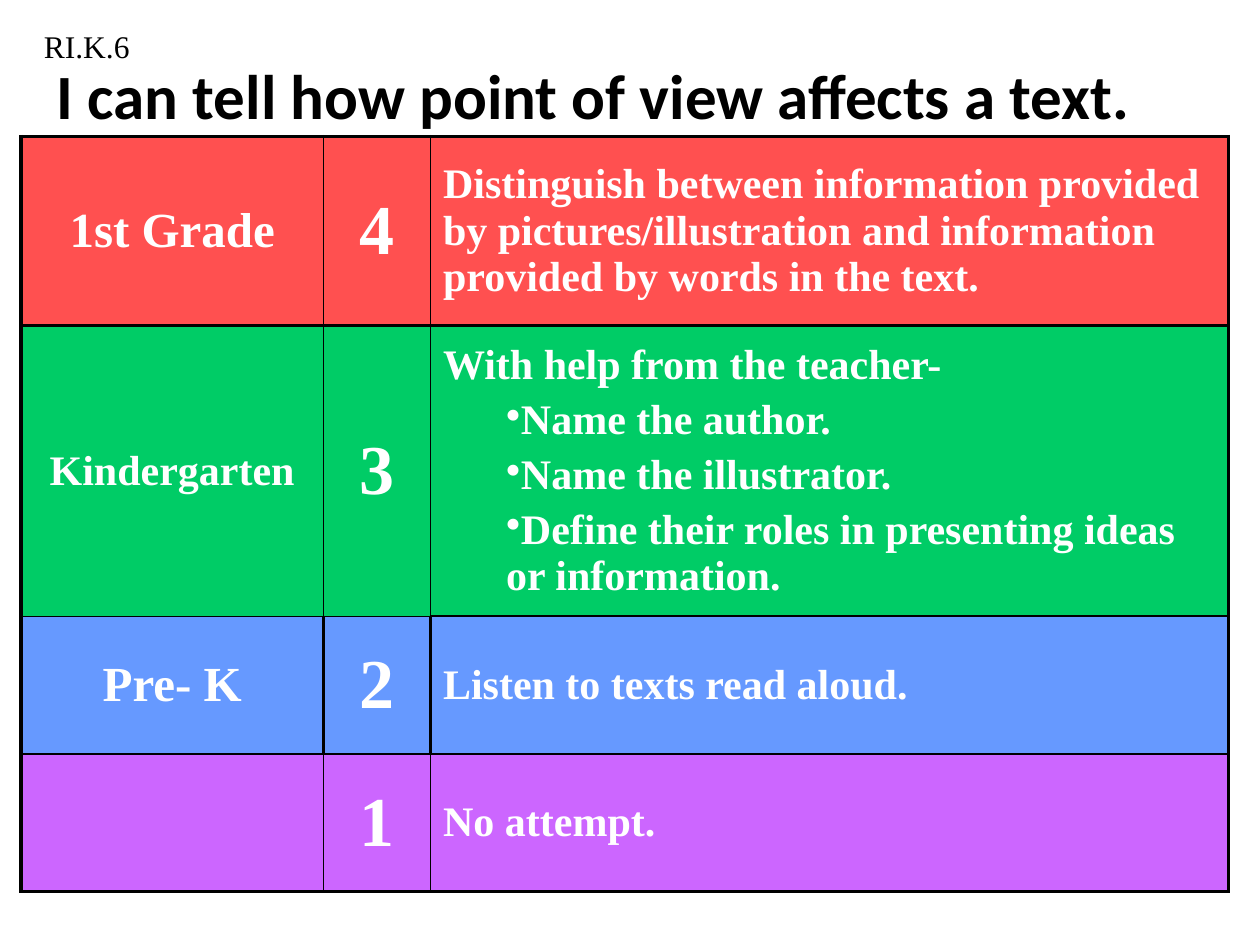
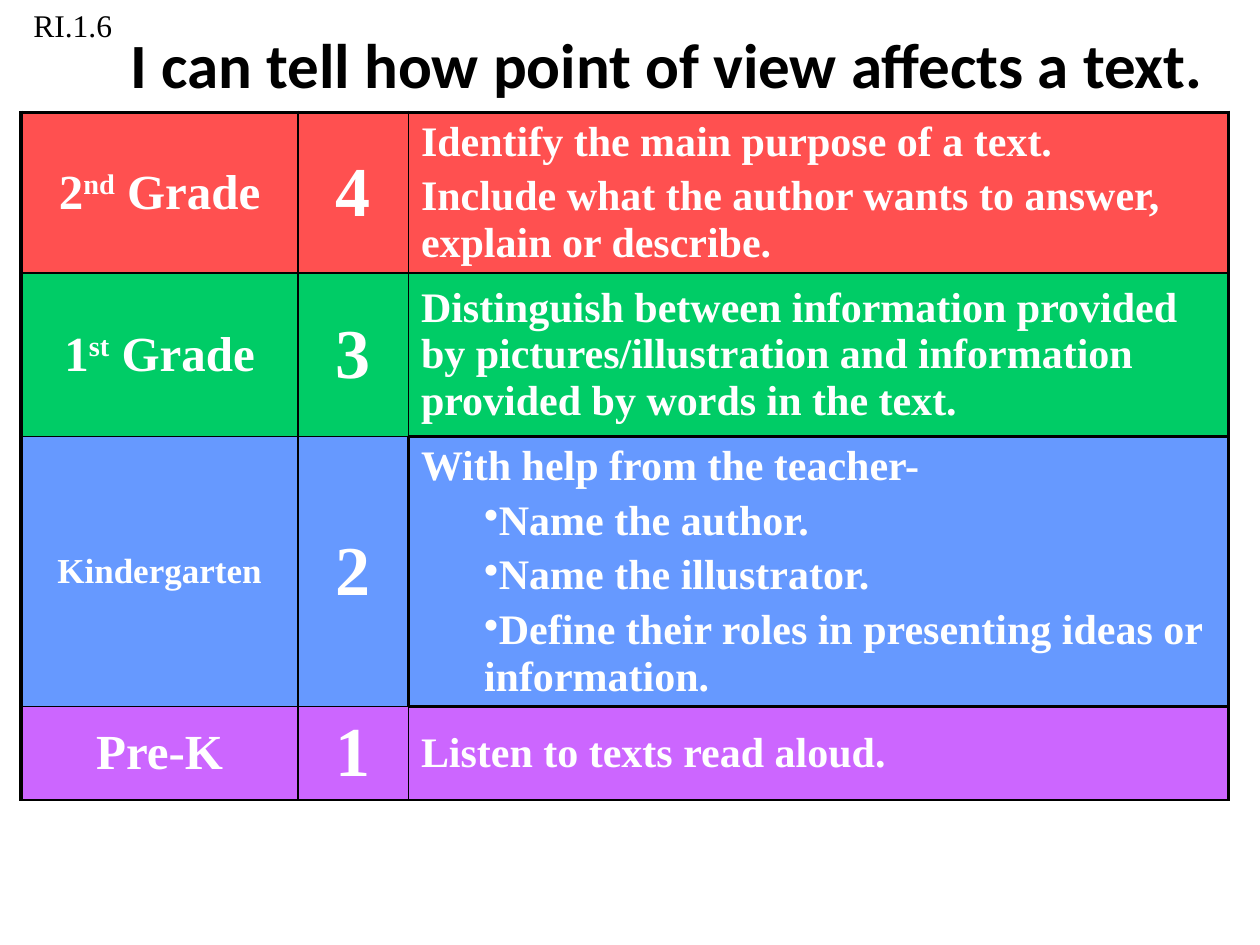
from dataclasses import dataclass
from lxml.etree import SubElement
from pptx import Presentation
from pptx.dml.color import RGBColor as Color
from pptx.enum.text import MSO_ANCHOR as Anchor, MSO_AUTO_SIZE as AutoSize, PP_ALIGN as Align
from pptx.oxml.ns import qn
from pptx.util import Emu, Inches, Pt

COLORS = {
    "ink": "000000", "paper": "FFFFFF",
    "4": "FF5050", "3": "00CC66", "2": "6699FF", "1": "CC66FF",
}
GRID_COLUMNS, GRID_ROWS = 120, 90
GOAL = "I can tell how point of view affects a text."
DISTINGUISH = ["Distinguish between information provided by pictures/illustration "
               "and information provided by words in the text."]
WITH_HELP = ["With help from the teacher-", "•Name the author.", "•Name the illustrator.",
             "•Define their roles in presenting ideas or information."]
LISTEN = ["Listen to texts read aloud."]


@dataclass
class Level:
    grade: tuple
    criteria: list
    height: float
    grade_size: int = 28


class RubricDeck:
    title_font, body_font = "Calibri", "Times New Roman"
    thin, medium, thick = 1, 1.5, 2.25

    def __init__(self):
        self.deck = Presentation()
        self.deck.slide_width, self.deck.slide_height = Inches(10), Inches(7.5)
        self.page = None

    def across(self, columns):
        return Emu(round(self.deck.slide_width * columns / GRID_COLUMNS))

    def down(self, rows):
        return Emu(round(self.deck.slide_height * rows / GRID_ROWS))

    def area(self, left, top, width, height):
        return self.across(left), self.down(top), self.across(width), self.down(height)

    def add_page(self):
        self.page = self.deck.slides.add_slide(self.deck.slide_layouts[5])

    def format_para(self, para, font, size, color, bold=False, align=Align.LEFT):
        para.alignment = align
        for span in para.runs:
            span.font.name, span.font.size, span.font.bold = font, Pt(size), bold
            span.font.color.rgb = Color.from_string(COLORS[color])

    def title(self, text, left, top):
        box = self.page.shapes.title
        box.left, box.top, box.width, box.height = self.area(left, top, 113, 12)
        frame = box.text_frame
        frame.text = text
        frame.word_wrap, frame.auto_size = True, AutoSize.NONE
        frame.vertical_anchor = Anchor.MIDDLE
        self.format_para(frame.paragraphs[0], self.title_font, 36, "ink", True, Align.CENTER)

    def standard_code(self, text, left, top):
        frame = self.page.shapes.add_textbox(*self.area(left, top, 17, 4.85)).text_frame
        frame.text = text
        frame.word_wrap, frame.auto_size = True, AutoSize.SHAPE_TO_FIT_TEXT
        self.format_para(frame.paragraphs[0], self.body_font, 18, "ink")

    def cell_para(self, para, size, align=Align.LEFT):
        self.format_para(para, self.body_font, size, "paper", True, align)
        para.space_before = Pt(size * 0.2)

    def borders(self, cell, row, column):
        inner = self.medium if row == 2 else self.thin
        level = self.medium if column == 2 else self.thin
        widths = {
            "L": self.thick if column == 0 else inner,
            "R": self.thick if column == 2 and row != 2 else inner,
            "T": (self.thick, self.medium, level, level)[row],
            "B": (self.medium, level, level, self.medium)[row],
        }
        properties = cell._tc.get_or_add_tcPr()
        for side, width in widths.items():
            line = SubElement(properties, qn(f"a:ln{side}"), w=str(Pt(width)))
            fill = SubElement(line, qn("a:solidFill"))
            SubElement(fill, qn("a:srgbClr"), val=COLORS["ink"])

    def grade_cell(self, cell, parts, size):
        para = cell.text_frame.paragraphs[0]
        for index, part in enumerate(parts):
            span = para.add_run()
            span.text = part
            if index == 1:
                span._r.get_or_add_rPr().set("baseline", "30000")
        self.cell_para(para, size, Align.CENTER)

    def score_cell(self, cell, score):
        cell.text_frame.text = score
        self.cell_para(cell.text_frame.paragraphs[0], 40, Align.CENTER)

    def criteria_cell(self, cell, criteria):
        cell.text_frame.text = "\n".join(line.lstrip("•") for line in criteria)
        for line, para in zip(criteria, cell.text_frame.paragraphs):
            self.cell_para(para, 24)
            if line.startswith("•"):
                para.level = 1
                properties = para._p.get_or_add_pPr()
                properties.set("marL", str(Inches(0.5)))
                properties.set("indent", "0")
                SubElement(properties, qn("a:buChar"), char="•")

    def rubric(self, top, widths, levels):
        height = sum(level.height for level in levels)
        place = self.area(2, top, sum(widths), height)
        table = self.page.shapes.add_table(len(levels), len(widths), *place).table
        table.first_row = table.horz_banding = False
        for column, width in zip(table.columns, widths):
            column.width = self.across(width)
        for row, level in enumerate(levels):
            table.rows[row].height = self.down(level.height)
            score = str(len(levels) - row)
            grade_cell, score_cell, criteria_cell = cells = table.rows[row].cells
            self.grade_cell(grade_cell, level.grade, level.grade_size)
            self.score_cell(score_cell, score)
            self.criteria_cell(criteria_cell, level.criteria)
            for column, cell in enumerate(cells):
                cell.vertical_anchor = Anchor.MIDDLE
                self.borders(cell, row, column)
                cell.fill.solid()
                cell.fill.fore_color.rgb = Color.from_string(COLORS[score])


def main():
    rubrics = RubricDeck()

    rubrics.add_page()
    rubrics.title(GOAL, 0, 3)
    rubrics.rubric(13, (28.8, 10.2, 76), [
        Level(("1st Grade",), DISTINGUISH, 18),
        Level(("Kindergarten",), WITH_HELP, 27.7, 24),
        Level(("Pre- K",), LISTEN, 13.1),
        Level((), ["No attempt."], 13.1),
    ])
    rubrics.standard_code("RI.K.6", 3, 2)

    rubrics.add_page()
    rubrics.title(GOAL, 7, 0)
    rubrics.rubric(10.7, (26.4, 10.5, 78.1), [
        Level(("2", "nd", " Grade"),
              ["Identify the main purpose of a text.",
               "Include what the author wants to answer, explain or describe."], 15.2),
        Level(("1", "st", " Grade"), DISTINGUISH, 15.6),
        Level(("Kindergarten",), WITH_HELP, 25.7, 20),
        Level(("Pre-K",), LISTEN, 8.9),
    ])
    rubrics.standard_code("RI.1.6", 2, 0)

    rubrics.deck.save("out.pptx")


if __name__ == "__main__":
    main()
